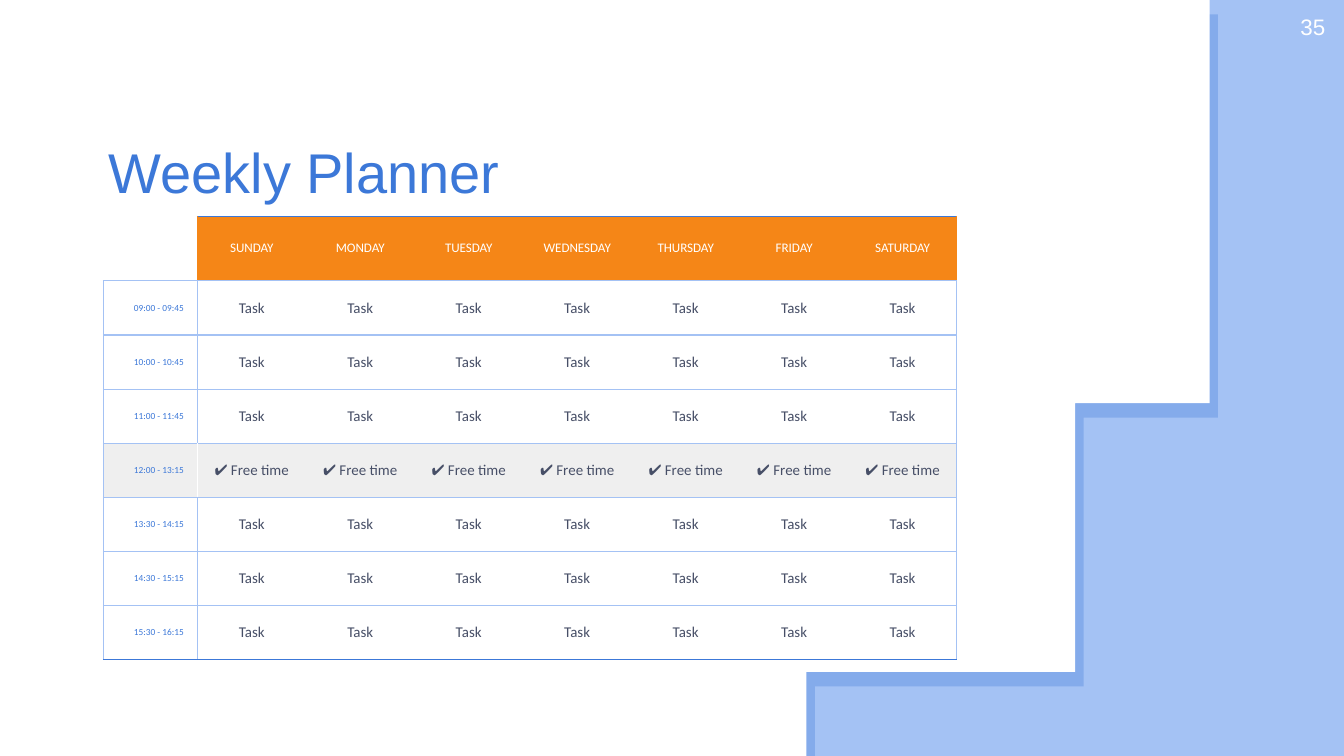
from lxml import etree
from pptx import Presentation
from pptx import util as u
from pptx.dml.color import RGBColor
from pptx.enum import text
from pptx.oxml import ns

WHITE = RGBColor(0xFF, 0xFF, 0xFF)
SKY = RGBColor(0xA4, 0xC2, 0xF4)
BLUE = RGBColor(0x3C, 0x78, 0xD8)
ORANGE = RGBColor(0xF5, 0x86, 0x17)
GREY = RGBColor(0xEF, 0xEF, 0xEF)
SLATE = RGBColor(0x47, 0x4F, 0x67)

LEFT, MID, RIGHT = (text.PP_ALIGN.LEFT, text.PP_ALIGN.CENTER, text.PP_ALIGN.RIGHT)
DAYS = ["SUNDAY", "MONDAY", "TUESDAY", "WEDNESDAY", "THURSDAY", "FRIDAY", "SATURDAY"]
TIMES = ["09:00 - 09:45", "10:00 - 10:45", "11:00 - 11:45", "12:00 - 13:15",
         "13:30 - 14:15", "14:30 - 15:15", "15:30 - 16:15"]
BREAK = 4  # table row of the free time
HEAD, SIDE = 0.48, 0.7  # height of the day row, width of the time column

# Speech bubble outline, in inches: right arc, tail, lower arc, page corners
EDGE = [
    (8.36, 0), (8.39, 0.05), (8.45, 0.15), (8.5, 0.26), (8.55, 0.36), (8.59, 0.47),
    (8.63, 0.58), (8.67, 0.69), (8.71, 0.8), (8.74, 0.91), (8.77, 1.02), (8.79, 1.14),
    (8.81, 1.25), (8.83, 1.37), (8.84, 1.49), (8.85, 1.6), (8.85, 1.86), (8.84, 2.02),
    (8.83, 2.17), (8.81, 2.32), (8.78, 2.47), (8.75, 2.62), (8.71, 2.77), (8.66, 2.91),
    (8.61, 3.06), (8.55, 3.2), (8.48, 3.34), (8.41, 3.47), (8.33, 3.61), (8.25, 3.74),
    (8.16, 3.87), (8.07, 4), (8.02, 4.06),
    (8.26, 4.64), (7.64, 4.48),
    (7.59, 4.52), (7.5, 4.61), (7.4, 4.7), (7.3, 4.78), (7.19, 4.86), (7.09, 4.94),
    (6.98, 5.02), (6.86, 5.09), (6.75, 5.17), (6.63, 5.24), (6.51, 5.3), (6.39, 5.37),
    (6.26, 5.43), (6.14, 5.49), (6.01, 5.55), (5.88, 5.6), (5.81, 5.63),
    (0, 5.63), (0, 0),
]


def write(frame, words, size, font, color, align):
    para = frame.paragraphs[0]
    para.alignment = align
    run = para.add_run()
    run.text = words
    run.font.size = u.Pt(size)
    run.font.name = font
    run.font.color.rgb = color


def add_bubble(slide):
    pen = slide.shapes.build_freeform(*EDGE[0], scale=u.Inches(1))
    pen.add_line_segments(EDGE[1:], close=True)
    bubble = pen.convert_to_shape()
    bubble.fill.solid()
    bubble.fill.fore_color.rgb = WHITE
    bubble.line.fill.background()
    # Hard shadow, down and to the right
    bubble.shadow.inherit = False
    glow = bubble.element.spPr.find(ns.qn("a:effectLst"))
    cast = etree.SubElement(glow, ns.qn("a:outerShdw"), blurRad="0", dist=str(u.Pt(9)),
                            dir=str(60 * 60000), algn="bl", rotWithShape="0")
    tint = etree.SubElement(cast, ns.qn("a:srgbClr"), val=str(BLUE))
    etree.SubElement(tint, ns.qn("a:alpha"), val="30000")


def add_label(slide, box, words, size, color, align, anchor):
    frame = slide.shapes.add_textbox(*map(u.Inches, box)).text_frame
    frame.word_wrap = True
    frame.vertical_anchor = anchor
    frame.margin_left = frame.margin_right = u.Inches(0.1)
    frame.margin_top = frame.margin_bottom = u.Inches(0.1)
    write(frame, words, size, "Arial", color, align)


def set_edges(cell, **edges):
    """Draw the left, right, top and bottom borders; None means no line."""
    props = cell._tc.get_or_add_tcPr()
    for spot, side in enumerate(("L", "R", "T", "B")):
        color = edges.get(side)
        line = etree.Element(ns.qn("a:ln" + side), w=str(u.Pt(0.75)))
        if color is None:
            etree.SubElement(line, ns.qn("a:noFill"))
        else:
            fill = etree.SubElement(line, ns.qn("a:solidFill"))
            etree.SubElement(fill, ns.qn("a:srgbClr"), val=str(color))
        props.insert(spot, line)


def style_cell(cell, row, col, rows, cols):
    # Fill
    shade = GREY if row == BREAK else ORANGE if row == 0 and col else None
    if shade is None:
        cell.fill.background()
    else:
        cell.fill.solid()
        cell.fill.fore_color.rgb = shade
    # Borders
    split = {0: ORANGE, BREAK: WHITE}.get(row, SKY)
    outer = ORANGE if row == 0 else SKY
    set_edges(
        cell,
        L=split if col == 1 else SKY if col == 0 and row else None,
        R=split if col == 0 else outer if col == cols - 1 else None,
        T=SKY if row else BLUE if col else None,
        B=BLUE if row == rows - 1 else SKY,
    )
    # Margins; the empty corner must not stretch its row
    pad = u.Inches(0.1 if row or col else 0)
    cell.margin_left = cell.margin_right = pad
    cell.margin_top = cell.margin_bottom = pad
    cell.vertical_anchor = text.MSO_ANCHOR.MIDDLE


def add_planner(slide, box):
    wide, high = box[2:]
    rows, cols = len(TIMES) + 1, len(DAYS) + 1
    grid = slide.shapes.add_table(rows, cols, *map(u.Inches, box)).table
    grid.first_row = grid.horz_banding = False
    for col in range(cols):
        grid.columns[col].width = u.Inches((wide - SIDE) / len(DAYS) if col else SIDE)
    for row in range(rows):
        grid.rows[row].height = u.Inches((high - HEAD) / len(TIMES) if row else HEAD)
        for col in range(cols):
            cell = grid.cell(row, col)
            style_cell(cell, row, col, rows, cols)
            frame = cell.text_frame
            if row and col:
                task = "✔ Free time" if row == BREAK else "Task"
                write(frame, task, 8, "Calibri", SLATE, MID)
            elif row:
                write(frame, TIMES[row - 1], 5, "Calibri", BLUE, RIGHT)
            elif col:
                write(frame, DAYS[col - 1], 7, "Calibri", WHITE, MID)


def main():
    deck = Presentation()
    deck.slide_width = u.Inches(10)
    deck.slide_height = deck.slide_width * 9 // 16
    slide = deck.slides.add_slide(deck.slide_layouts[6])
    slide.background.fill.solid()
    slide.background.fill.fore_color.rgb = SKY
    add_bubble(slide)
    add_label(slide, (0.71, 0.81, 6.53, 0.81), "Weekly Planner", 30, BLUE, LEFT,
              text.MSO_ANCHOR.BOTTOM)
    add_label(slide, (9.36, 0, 0.6, 0.43), "35", 12, WHITE, RIGHT, text.MSO_ANCHOR.TOP)
    add_planner(slide, (0.77, 1.61, 6.35, 3.3))
    deck.save("out.pptx")


if __name__ == "__main__":
    main()
